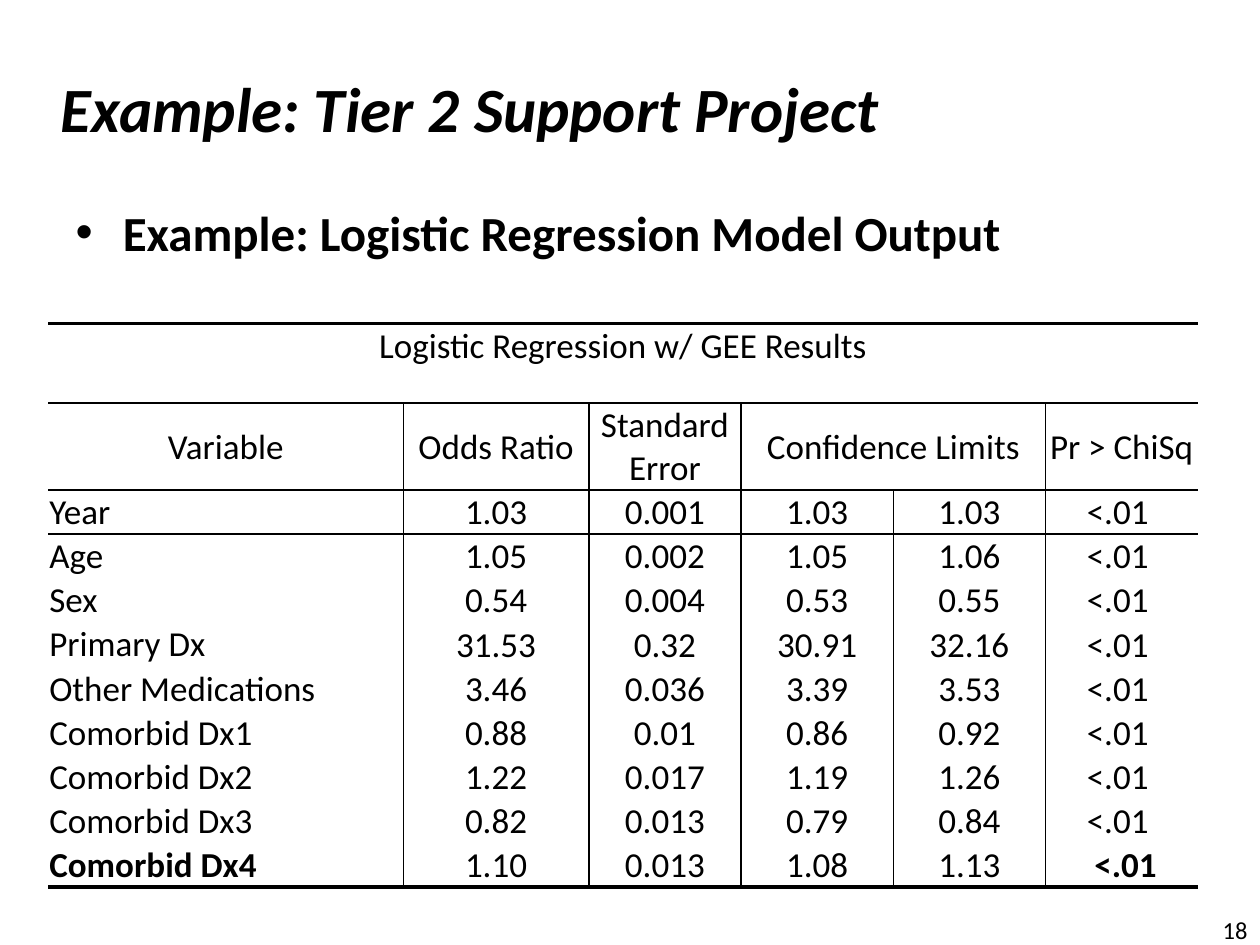
from dataclasses import dataclass

from lxml.etree import SubElement
from pptx import Presentation
from pptx.dml.color import RGBColor
from pptx.enum.text import MSO_ANCHOR, PP_ALIGN
from pptx.oxml.ns import qn
from pptx.util import Pt

COLORS = {"ink": "000000", "paper": "FFFFFF"}
FONT = "Calibri"
WIDTHS = [203, 106, 87, 87, 87, 87]
TOP, HEAD, BODY = 45.4, 49.6, 25.2


@dataclass
class Entry:
    name: str
    odds: str
    error: str
    low: str
    high: str
    prob: str = "<.01 "
    bold: bool = False


ENTRIES = [
    Entry("Year", "1.03", "0.001", "1.03", "1.03"),
    Entry("Age", "1.05", "0.002", "1.05", "1.06"),
    Entry("Sex", "0.54", "0.004", "0.53", "0.55"),
    Entry("Primary Dx", "31.53", "0.32", "30.91", "32.16"),
    Entry("Other Medications", "3.46", "0.036", "3.39", "3.53"),
    Entry("Comorbid Dx1", "0.88", "0.01", "0.86", "0.92"),
    Entry("Comorbid Dx2", "1.22", "0.017", "1.19", "1.26"),
    Entry("Comorbid Dx3", "0.82", "0.013", "0.79", "0.84"),
    Entry("Comorbid Dx4", "1.10", "0.013", "1.08", "1.13", " <.01", True),
]
HEADS = ["Variable", "Odds Ratio", "Standard\nError",
         "Confidence Limits", "", "Pr > ChiSq"]


def style(frame, size: float, bold: bool = False, italic: bool = False,
          align=PP_ALIGN.LEFT) -> None:
    for para in frame.paragraphs:
        para.alignment = align
        for run in para.runs:
            font = run.font
            font.name, font.size = FONT, Pt(size)
            font.bold, font.italic = bold, italic
            font.color.rgb = RGBColor.from_string(COLORS["ink"])


def place(shape, left: float, top: float, width: float, height: float) -> None:
    shape.left, shape.top = Pt(left), Pt(top)
    shape.width, shape.height = Pt(width), Pt(height)


def edge(cell, side: str, width: float) -> None:
    line = SubElement(cell._tc.get_or_add_tcPr(), qn(f"a:ln{side}"),
                      w=str(int(Pt(width))))
    if width:
        fill = SubElement(line, qn("a:solidFill"))
        SubElement(fill, qn("a:srgbClr"), val=COLORS["ink"])
    else:
        SubElement(line, qn("a:noFill"))


def format_cell(cell, row: int, col: int, last: int) -> None:
    inner = row > 0
    split = row != 1
    rules = {0: 2, 1: 1, 2: 1, 3: 1, last + 1: 2}
    sides = {
        "L": inner and col > 0 and (split or col != 4),
        "R": inner and col < 5 and (split or col != 3),
        "T": rules.get(row, 0),
        "B": rules.get(row + 1, 0),
    }
    for side, width in sides.items():
        edge(cell, side, width)
    cell.fill.solid()
    cell.fill.fore_color.rgb = RGBColor.from_string(COLORS["paper"])
    cell.margin_left = cell.margin_right = cell.margin_top = Pt(0.7)
    cell.margin_bottom = Pt(0)
    plain = row == 0 or (row > 1 and col == 0)
    cell.vertical_anchor = MSO_ANCHOR.TOP if plain else MSO_ANCHOR.MIDDLE
    bold = row > 1 and col in (0, 5) and ENTRIES[row - 2].bold
    align = PP_ALIGN.LEFT if row > 1 and col == 0 else PP_ALIGN.CENTER
    style(cell.text_frame, 20, bold, align=align)


def draw_table(slide) -> None:
    rows = [["Logistic Regression w/ GEE Results"] + [""] * 5, HEADS]
    rows += [[e.name, e.odds, e.error, e.low, e.high, e.prob] for e in ENTRIES]
    heights = [TOP, HEAD] + [BODY] * len(ENTRIES)
    table = slide.shapes.add_table(
        len(rows), len(WIDTHS), Pt(27.5), Pt(185), Pt(sum(WIDTHS)),
        Pt(sum(heights))).table
    table.first_row = table.horz_banding = False
    for column, width in zip(table.columns, WIDTHS):
        column.width = Pt(width)
    table.cell(0, 0).merge(table.cell(0, 5))
    table.cell(1, 3).merge(table.cell(1, 4))
    for r, texts in enumerate(rows):
        table.rows[r].height = Pt(heights[r])
        for c, text in enumerate(texts):
            cell = table.cell(r, c)
            cell.text_frame.text = text
            format_cell(cell, r, c, len(rows) - 1)


def main() -> None:
    deck = Presentation()
    deck.slide_width, deck.slide_height = Pt(720), Pt(540)
    slide = deck.slides.add_slide(deck.slide_layouts[1])

    title = slide.shapes.title
    place(title, 27.5, 23, 648, 77)
    title.text_frame.text = "Example: Tier 2 Support Project"
    style(title.text_frame, 36, True, True)

    body = slide.placeholders[1]
    place(body, 36, 112, 648, 47.5)
    body.text_frame.text = "Example: Logistic Regression Model Output"
    body.text_frame.paragraphs[0].space_before = Pt(0)
    style(body.text_frame, 28, True)

    draw_table(slide)

    number = slide.shapes.add_textbox(Pt(558), Pt(517), Pt(162), Pt(29))
    frame = number.text_frame
    frame.word_wrap = True
    frame.vertical_anchor = MSO_ANCHOR.MIDDLE
    frame.text = "18"
    style(frame, 14, align=PP_ALIGN.RIGHT)

    deck.save("out.pptx")


if __name__ == "__main__":
    main()
